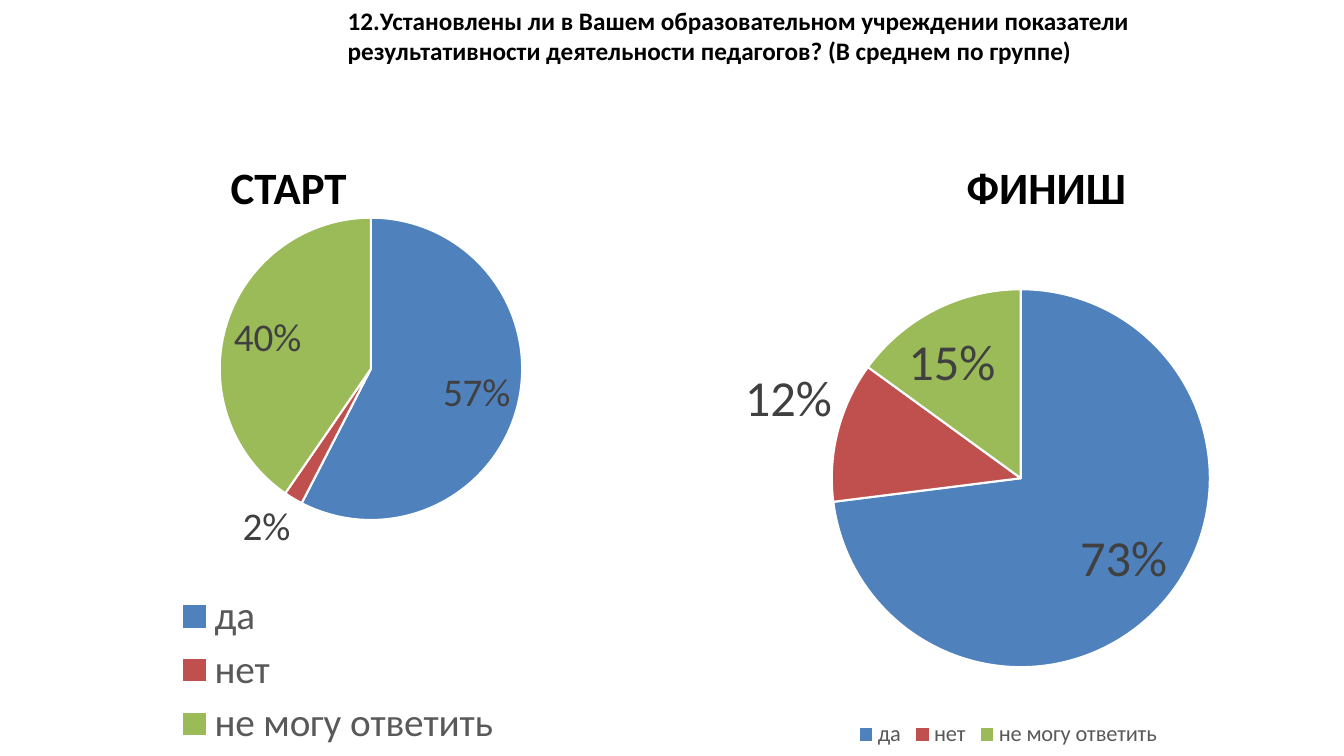
"""Build a slide comparing start and finish survey answers in two pie charts."""
from dataclasses import dataclass

from pptx import Presentation
from pptx import util as u
from pptx.chart import data as cd
from pptx.dml.color import RGBColor
from pptx.enum import chart as ch
from pptx.oxml import parse_xml
from pptx.oxml.ns import nsdecls, qn


@dataclass(frozen=True)
class Theme:
    """Colours, fonts and type sizes of the slide."""
    slices: tuple = ("4F81BD", "C0504D", "9BBB59")
    heading: str = "000000"
    legend: str = "595959"
    label: str = "404040"
    border: str = "FFFFFF"
    font: str = "Calibri"
    chart_font: str = "Arial"
    title_size: int = 18
    heading_size: int = 32
    chart_size: int = 10


THEME = Theme()
ANSWERS = ("да", "нет", "не могу ответить")


def style_font(font, size, color, name=THEME.font, bold=False):
    """Set the size, colour, family and weight of a font."""
    font.size, font.name, font.bold = u.Pt(size), name, bold
    font.color.rgb = RGBColor.from_string(color)


def add_text(s, box, words, size, wrap=False):
    """Add a bold text box."""
    tf = s.shapes.add_textbox(*map(u.Inches, box)).text_frame
    tf.word_wrap = wrap
    p = tf.paragraphs[0]
    p.text = words
    style_font(p.font, size, THEME.heading, bold=True)


def set_layout(parent, index, frame, area, inner=False):
    """Place a chart part at an area given in slide inches."""
    for old in parent.findall(qn("c:layout")):
        parent.remove(old)
    left, top, width, height = frame
    x, y, w, h = area
    target = '<c:layoutTarget val="inner"/>' if inner else ""
    parts = {"x": (x - left) / width, "y": (y - top) / height,
             "w": w / width, "h": h / height}
    modes = "".join(f'<c:{k}Mode val="edge"/>' for k in "xy")
    sizes = "".join(f'<c:{k} val="{v:.4f}"/>' for k, v in parts.items())
    parent.insert(index, parse_xml(
        f'<c:layout {nsdecls("c")}><c:manualLayout>{target}{modes}{sizes}'
        '</c:manualLayout></c:layout>'))


def add_pie(s, frame, values, pie, key, label_size, legend_size):
    """Add a pie chart with percentage labels and a legend."""
    data = cd.CategoryChartData(number_format='0"%"')
    data.categories = ANSWERS
    data.add_series("Series 1", values)
    chart = s.shapes.add_chart(
        ch.XL_CHART_TYPE.PIE, *map(u.Inches, frame), data).chart
    chart.has_title = False
    style_font(chart.font, THEME.chart_size, THEME.heading, THEME.chart_font)

    plot = chart.plots[0]
    plot.vary_by_categories = True
    for i, color in enumerate(THEME.slices):
        fmt = plot.series[0].points[i].format
        fmt.fill.solid()
        fmt.fill.fore_color.rgb = RGBColor.from_string(color)
        fmt.line.color.rgb = RGBColor.from_string(THEME.border)
        fmt.line.width = u.Pt(1.5)

    labels = plot.series[0].data_labels
    labels.show_value = True
    labels.number_format = '0"%"'
    labels.number_format_is_linked = False
    labels.position = ch.XL_LABEL_POSITION.BEST_FIT
    style_font(labels.font, label_size, THEME.label)

    chart.has_legend = True
    chart.legend.position = ch.XL_LEGEND_POSITION.BOTTOM
    chart.legend.include_in_layout = False
    style_font(chart.legend.font, legend_size, THEME.legend)

    root = chart.element.find(qn("c:chart"))
    set_layout(root.find(qn("c:plotArea")), 0, frame, pie, inner=True)
    set_layout(root.find(qn("c:legend")), 1, frame, key)


def main():
    """Build and save the slide."""
    prs = Presentation()
    prs.slide_width, prs.slide_height = u.Inches(13.33), u.Inches(7.5)
    s = prs.slides.add_slide(prs.slide_layouts[6])
    add_text(s, (3.35, 0, 9.45, 1.3),
             "12.Установлены ли в Вашем образовательном учреждении показатели "
             "результативности деятельности педагогов? (В среднем по группе)",
             THEME.title_size, wrap=True)
    add_pie(s, (0, 2.02, 6.67, 5.48), (57, 2, 40),
            pie=(2.18, 2.16, 3, 3), key=(1.7, 5.82, 3.3, 1.66),
            label_size=28, legend_size=28)
    add_text(s, (2.19, 1.54, 1.8, 0.63), "СТАРТ", THEME.heading_size)
    add_text(s, (9.49, 1.54, 2.3, 0.63), "ФИНИШ", THEME.heading_size)
    add_pie(s, (6.67, 2.18, 6.67, 5.31), (73, 12, 15),
            pie=(8.25, 2.87, 3.75, 3.75), key=(8.45, 7.15, 3.1, 0.34),
            label_size=36, legend_size=16)
    prs.save("out.pptx")


if __name__ == "__main__":
    main()
